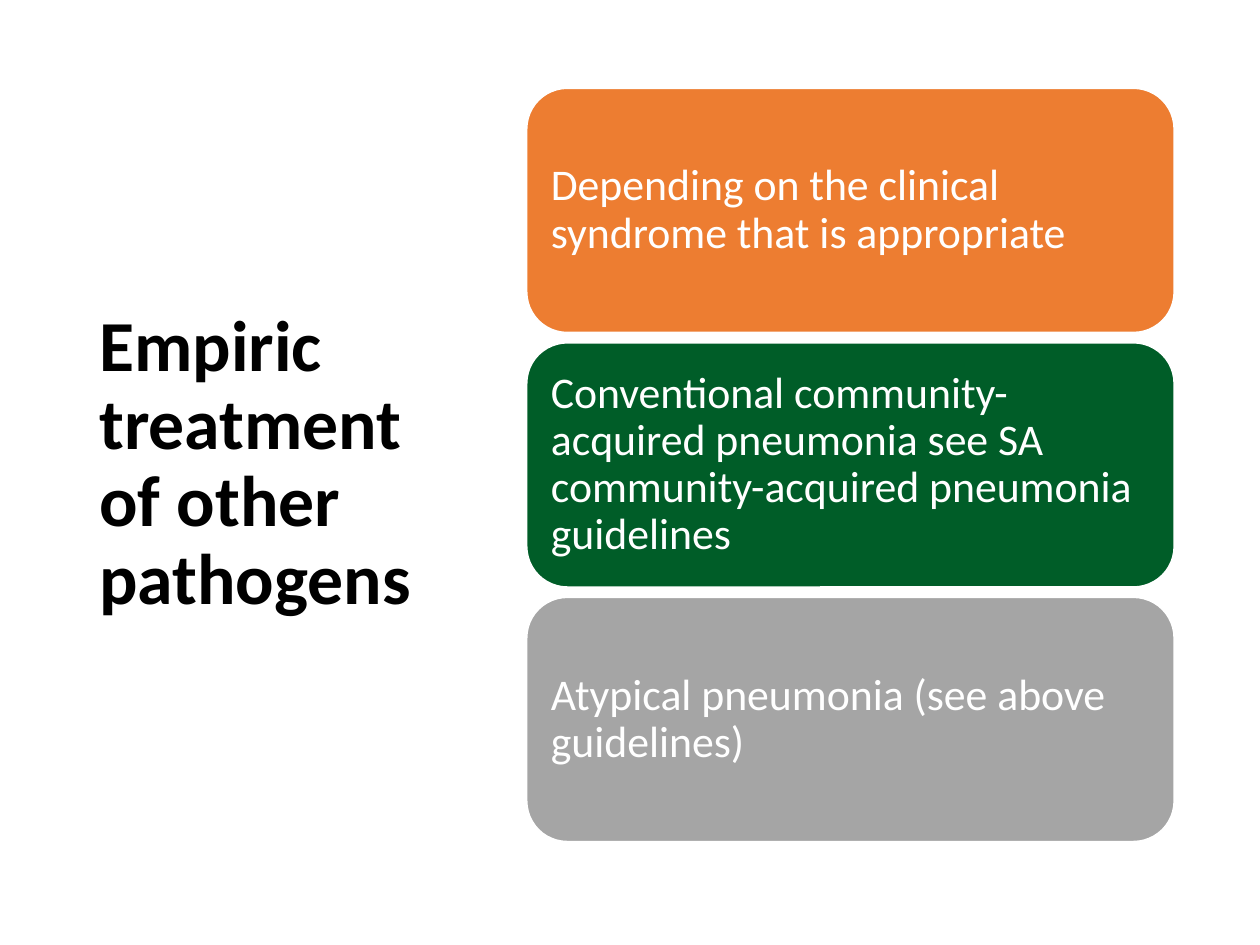
"""Build the slide on empiric treatment of other pathogens."""
from pptx import Presentation, util as u
from pptx.dml.color import RGBColor
from pptx.enum import shapes, text

COLORS = {"title": "000000", "white": "FFFFFF", "orange": "ED7D31",
          "green": "005D28", "grey": "A5A5A5"}
CARDS = [
    ("orange", "Depending on the clinical syndrome that is appropriate"),
    ("green", "Conventional community-acquired pneumonia see SA "
              "community-acquired pneumonia guidelines"),
    ("grey", "Atypical pneumonia (see above guidelines)"),
]
CARD_LEFT, CARD_TOP, CARD_W, CARD_H, ROW = 4.18, 0.7, 5.14, 1.94, 2.02


def write(sp, words, size, color, bold=False):
    tf = sp.text_frame
    tf.word_wrap = True
    tf.vertical_anchor = text.MSO_ANCHOR.MIDDLE
    tf.margin_left = tf.margin_right = u.Inches(0.1)
    p = tf.paragraphs[0]
    p.text = words
    p.alignment = text.PP_ALIGN.LEFT
    p.line_spacing = 0.9
    p.font.name = "Calibri"
    p.font.size = u.Pt(size)
    p.font.bold = bold
    p.font.color.rgb = RGBColor.from_string(COLORS[color])


prs = Presentation()
prs.slide_width, prs.slide_height = u.Inches(10), u.Inches(7.5)
s = prs.slides.add_slide(prs.slide_layouts[6])

title = s.shapes.add_textbox(*map(u.Inches, (0.69, 0.68, 2.77, 6.02)))
write(title, "Empiric treatment of other pathogens", 41, "title", bold=True)

for i, (color, words) in enumerate(CARDS):
    box = (CARD_LEFT, CARD_TOP + i * ROW, CARD_W, CARD_H)
    sp = s.shapes.add_shape(shapes.MSO_SHAPE.ROUNDED_RECTANGLE, *map(u.Inches, box))
    sp.shadow.inherit = False
    sp.fill.solid()
    sp.fill.fore_color.rgb = RGBColor.from_string(COLORS[color])
    sp.line.color.rgb = RGBColor.from_string(COLORS["white"])
    sp.line.width = u.Pt(1)
    write(sp, words, 25, "white")

prs.save("out.pptx")
